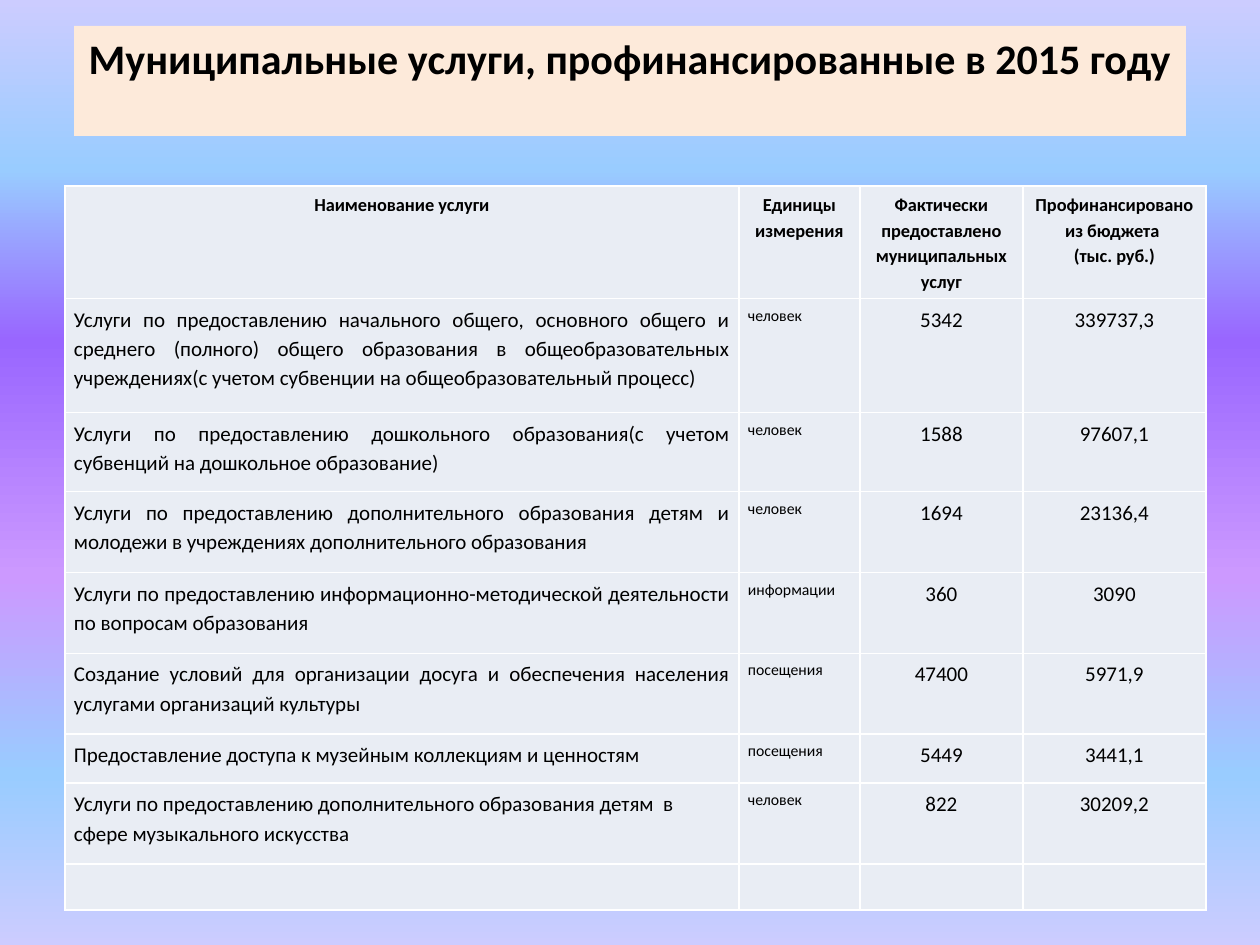
from lxml import etree
from pptx import Presentation
from pptx import util as u
from pptx.dml.color import RGBColor
from pptx.enum import shapes, text
from pptx.oxml.ns import qn

PX = 914400 / 126
MID, BOTH, LEFT = text.PP_ALIGN.CENTER, text.PP_ALIGN.JUSTIFY, text.PP_ALIGN.LEFT

STOPS = [(0, "CCCCFF"), (18, "99CCFF"), (36, "9966FF"),
         (61, "CC99FF"), (82, "99CCFF"), (100, "CCCCFF")]
COLS = [674, 121, 163, 183]
ROWS = [111, 114, 79, 81, 81, 81, 49, 81, 46]
HEAD = ["Наименование услуги", "Единицы измерения",
        "Фактически предоставлено муниципальных услуг",
        "Профинансировано из бюджета \n(тыс. руб.)"]
BODY = [
    ("Услуги по предоставлению начального общего, основного общего и среднего "
     "(полного) общего образования в общеобразовательных учреждениях(с учетом "
     "субвенции на общеобразовательный процесс)", "человек", "5342", "339737,3"),
    ("Услуги по предоставлению дошкольного образования(с учетом субвенций на "
     "дошкольное образование)", "человек", "1588", "97607,1"),
    ("Услуги по предоставлению дополнительного образования детям и молодежи в "
     "учреждениях дополнительного образования", "человек", "1694", "23136,4"),
    ("Услуги по предоставлению информационно-методической деятельности по "
     "вопросам образования", "информации", "360", "3090"),
    ("Создание условий для организации досуга и обеспечения населения услугами "
     "организаций культуры", "посещения", "47400", "5971,9"),
    ("Предоставление доступа к музейным коллекциям и ценностям",
     "посещения", "5449", "3441,1"),
    ("Услуги по предоставлению дополнительного образования детям  в сфере "
     "музыкального искусства", "человек", "822", "30209,2"),
    ("", "", "", ""),
]


def px(n):
    return u.Emu(round(n * PX))


def rgb(code):
    return RGBColor.from_string(code)


def write(frame, words, size=12, bold=False, align=MID, space=1.0):
    """Fill a text frame, one paragraph per line of words."""
    frame.word_wrap = True
    for i, line in enumerate(words.split("\n")):
        para = frame.add_paragraph() if i else frame.paragraphs[0]
        para.alignment, para.line_spacing = align, space
        run = para.add_run()
        run.text = line
        run.font.name, run.font.size, run.font.bold = "Calibri", u.Pt(size), bold
        run.font.color.rgb = rgb("000000")


def paint(slide, stops):
    """Give the slide a gradient that runs from top to bottom."""
    fill = slide.background.fill
    fill.gradient()
    fill.gradient_angle = 270
    bag = fill.gradient_stops[0]._gs.getparent()
    for old in list(bag):
        bag.remove(old)
    for pos, code in stops:
        stop = etree.SubElement(bag, qn("a:gs"), pos=str(pos * 1000))
        etree.SubElement(stop, qn("a:srgbClr"), val=code)


def banner(slide, words, x, y, w, h):
    box = slide.shapes.add_shape(shapes.MSO_SHAPE.RECTANGLE, px(x), px(y), px(w), px(h))
    box.shadow.inherit = False
    box.fill.solid()
    box.fill.fore_color.rgb = rgb("FDEADA")
    box.line.fill.background()
    box.text_frame.vertical_anchor = text.MSO_ANCHOR.TOP
    write(box.text_frame, words, size=24, bold=True)


def edge(cell, code):
    """Draw a one-point border on all four sides."""
    props = cell._tc.get_or_add_tcPr()
    for side in ("lnL", "lnR", "lnT", "lnB"):
        line = etree.SubElement(props, qn("a:" + side), w=str(u.Pt(1)))
        fill = etree.SubElement(line, qn("a:solidFill"))
        etree.SubElement(fill, qn("a:srgbClr"), val=code)


def style(cell):
    cell.margin_left = cell.margin_right = px(9)
    cell.margin_top = cell.margin_bottom = px(5)
    edge(cell, "FFFFFF")
    cell.fill.solid()
    cell.fill.fore_color.rgb = rgb("E9EDF4")


def look(row, col):
    """Return the text format for a place in the table."""
    if row == 0:
        return dict(size=10.5, bold=True)
    if col == 0:
        return dict(align=LEFT if row == 7 else BOTH)
    return dict(size=9, align=BOTH) if col == 1 else {}


def grid(slide, data, x, y):
    table = slide.shapes.add_table(len(ROWS), len(COLS), px(x), px(y),
                                   px(sum(COLS)), px(sum(ROWS))).table
    for col, wide in zip(table.columns, COLS):
        col.width = px(wide)
    for row, high in zip(table.rows, ROWS):
        row.height = px(high)
    for r, line in enumerate(data):
        for c, words in enumerate(line):
            cell = table.cell(r, c)
            style(cell)
            write(cell.text_frame, words, space=1.15, **look(r, c))


def main():
    deck = Presentation()
    deck.slide_width, deck.slide_height = px(1260), px(945)
    slide = deck.slides.add_slide(deck.slide_layouts[6])
    paint(slide, STOPS)
    banner(slide, "Муниципальные услуги, профинансированные в 2015 году", 74, 26, 1112, 110)
    grid(slide, [HEAD] + BODY, 65, 186)
    deck.save("out.pptx")


if __name__ == "__main__":
    main()
